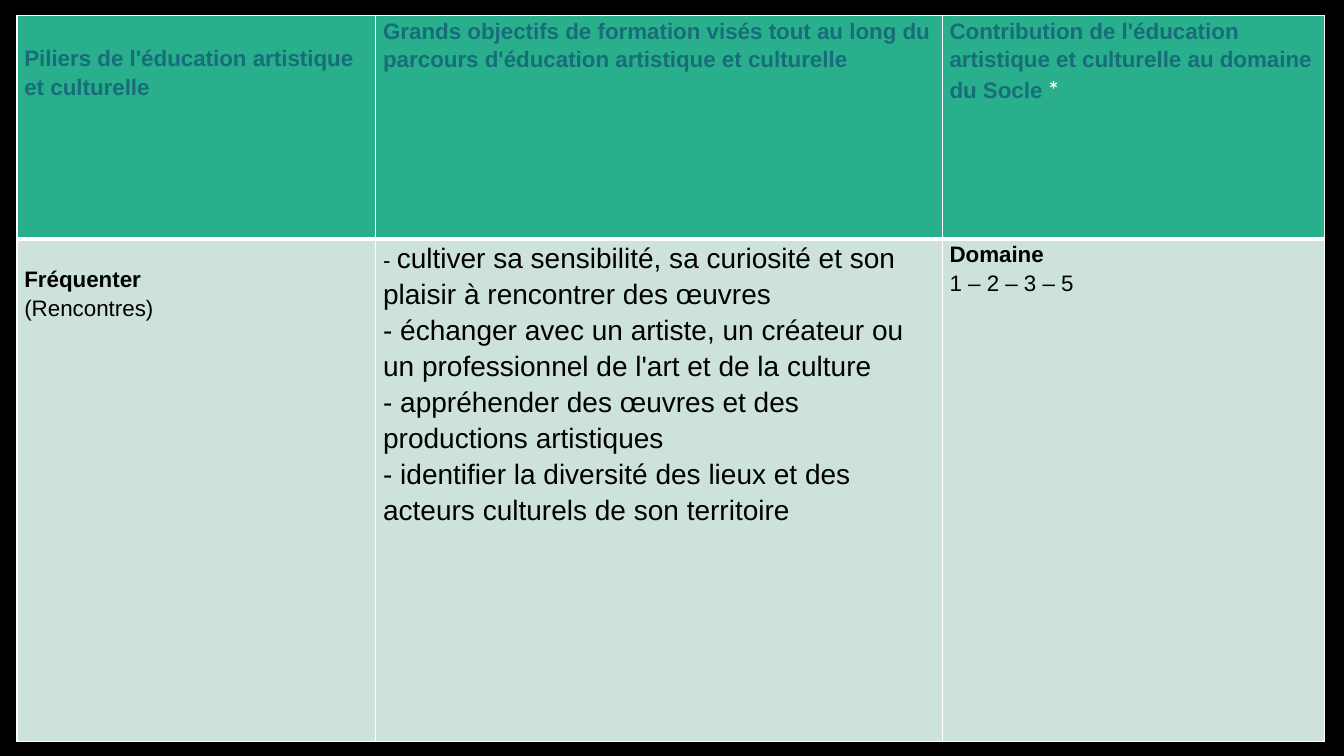
from lxml import etree
from pptx import Presentation
from pptx import util as u
from pptx.dml.color import RGBColor
from pptx.oxml import ns

BLACK = RGBColor(0x00, 0x00, 0x00)
WHITE = RGBColor(0xFF, 0xFF, 0xFF)
GREEN = RGBColor(0x29, 0xAF, 0x8C)
MINT = RGBColor(0xCD, 0xE3, 0xDA)
TEAL = RGBColor(0x17, 0x6D, 0x7A)

SMALL, LARGE = 16, 20


class SlideBuilder:
    """Holds the shared style and the current slide."""

    font = "Arial"
    line_spacing = 1.15
    side_margin = 5.2

    def __init__(self, presentation):
        self.slide = presentation.slides.add_slide(presentation.slide_layouts[6])

    def background(self, color):
        fill = self.slide.background.fill
        fill.solid()
        fill.fore_color.rgb = color

    def table(self, left, top, widths, heights):
        frame = self.slide.shapes.add_table(
            len(heights), len(widths), u.Pt(left), u.Pt(top),
            u.Pt(sum(widths)), u.Pt(sum(heights)))
        table = frame.table
        for column, width in zip(table.columns, widths):
            column.width = u.Pt(width)
        for row, height in zip(table.rows, heights):
            row.height = u.Pt(height)
        return table

    def borders(self, cell, color, widths):
        properties = cell._tc.get_or_add_tcPr()
        for side, width in widths.items():
            line = etree.SubElement(properties, ns.qn(f"a:ln{side}"), w=str(u.Pt(width)))
            solid = etree.SubElement(line, ns.qn("a:solidFill"))
            etree.SubElement(solid, ns.qn("a:srgbClr"), val=str(color))

    def cell(self, cell, paragraphs, fill, border_widths, top_margin=0):
        self.borders(cell, WHITE, border_widths)
        cell.fill.solid()
        cell.fill.fore_color.rgb = fill
        cell.margin_left = cell.margin_right = u.Pt(self.side_margin)
        cell.margin_top, cell.margin_bottom = u.Pt(top_margin), 0
        frame = cell.text_frame
        for index, runs in enumerate(paragraphs):
            paragraph = frame.add_paragraph() if index else frame.paragraphs[0]
            paragraph.line_spacing = self.line_spacing
            for run in runs:
                self.run(paragraph, *run)

    def run(self, paragraph, words, size, bold, color, font=None):
        run = paragraph.add_run()
        run.text = words
        run.font.name = font or self.font
        run.font.size = u.Pt(size)
        run.font.bold = bold
        run.font.color.rgb = color


def heading(words):
    return (words, SMALL, True, TEAL)


def body(words, size=SMALL, bold=False):
    return (words, size, bold, BLACK)


# Each cell: top margin, then its paragraphs as lists of runs
HEADER_ROW = [
    (20, [[heading("Piliers de l'éducation artistique et culturelle")]]),
    (0, [[heading("Grands objectifs de formation visés tout au long du")],
         [heading("parcours d'éducation artistique et culturelle")]]),
    (0, [[heading("Contribution de l'éducation artistique et culturelle au domaine du Socle "),
          ("*", SMALL, True, WHITE, "Lato")]]),
]
BODY_ROW = [
    (18, [[body("Fréquenter", bold=True)], [body("(Rencontres)")]]),
    (0, [[body("- "),
          body("cultiver sa sensibilité, sa curiosité et son plaisir à rencontrer des œuvres", LARGE)],
         [body("- échanger avec un artiste, un créateur ou un professionnel de l'art et de la culture", LARGE)],
         [body("- appréhender des œuvres et des productions artistiques", LARGE)],
         [body("- identifier la diversité des lieux et des acteurs culturels de son territoire", LARGE)]]),
    (0, [[body("Domaine", bold=True)], [body("1 – 2 – 3 – 5")]]),
]


def main():
    presentation = Presentation()
    presentation.slide_width, presentation.slide_height = u.Pt(960), u.Pt(540)
    builder = SlideBuilder(presentation)
    builder.background(BLACK)

    # Table grid
    table = builder.table(12.2, 10.8, [256.3, 404.6, 272.9], [159.8, 359.3])

    # Rows, parted by a thick rule under the header
    rows = [
        (HEADER_ROW, GREEN, {"L": 1, "R": 1, "T": 1, "B": 3}),
        (BODY_ROW, MINT, {"L": 1, "R": 1, "T": 3, "B": 1}),
    ]
    for row, (contents, fill, border_widths) in enumerate(rows):
        for column, (top_margin, paragraphs) in enumerate(contents):
            builder.cell(table.cell(row, column), paragraphs, fill, border_widths, top_margin)

    presentation.save("out.pptx")


if __name__ == "__main__":
    main()
